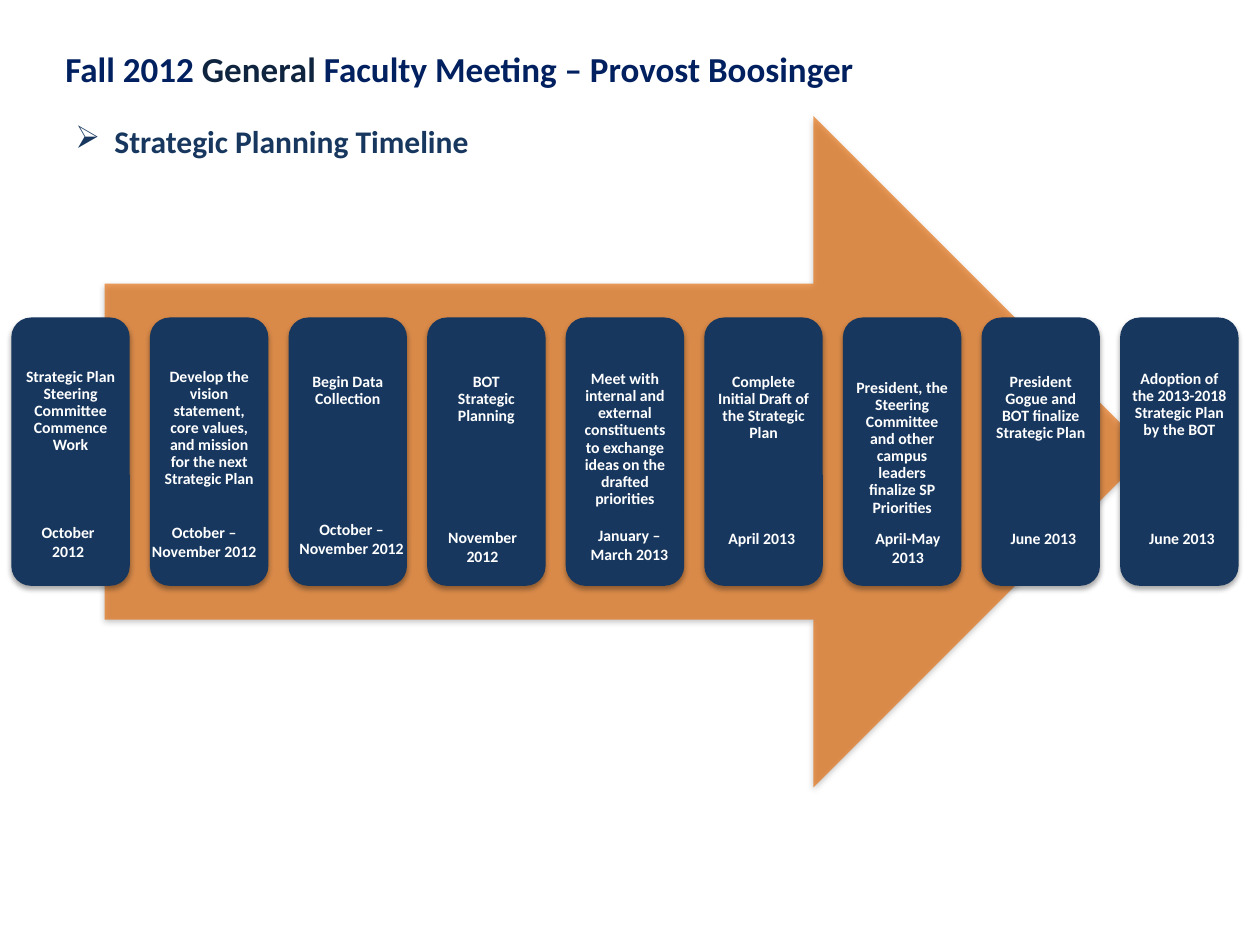
from lxml import etree
from pptx import Presentation
from pptx.dml.color import RGBColor
from pptx.enum.shapes import MSO_SHAPE
from pptx.enum.text import MSO_ANCHOR, PP_ALIGN
from pptx.oxml.ns import qn
from pptx.util import Inches, Pt

ARROW, CARD = MSO_SHAPE.RIGHT_ARROW, MSO_SHAPE.ROUNDED_RECTANGLE
TOP = MSO_ANCHOR.TOP
LEFT, CENTER = PP_ALIGN.LEFT, PP_ALIGN.CENTER

TITLE_BLUE = RGBColor(0x00, 0x20, 0x60)
DARK_NAVY = RGBColor(0x0F, 0x24, 0x3E)
NAVY = RGBColor(0x17, 0x37, 0x5E)
ORANGE = RGBColor(0xE4, 0x6C, 0x0A)
WHITE = RGBColor(0xFF, 0xFF, 0xFF)

FONT = "Calibri"
CARD_LEFT, CARD_TOP, CARD_WIDTH, CARD_HEIGHT = 0.09, 2.52, 0.94, 2.13
CARD_PITCH = 1.1

# Step, its top inset, date, and the date box (left, top, width)
STEPS = [
    ("Strategic Plan Steering Committee Commence Work", 0.36,
     "October\v2012", (0.08, 4.1, 0.92)),
    ("Develop the vision statement, core values, and mission for the next "
     "Strategic Plan", 0.36, "October –\vNovember 2012", (1.08, 4.1, 1.08)),
    ("Begin Data Collection", 0.4,
     "October –\vNovember 2012", (2.25, 4.08, 1.08)),
    ("BOT\vStrategic Planning", 0.4, "November 2012", (3.33, 4.14, 1)),
    ("Meet with internal and external constituents to exchange ideas on the "
     "drafted priorities", 0.38, "January –\vMarch 2013", (4.58, 4.12, 0.83)),
    ("Complete Initial Draft of the Strategic Plan", 0.4,
     "April 2013", (5.67, 4.15, 0.75)),
    ("President, the Steering Committee and other campus leaders finalize "
     "SP Priorities", 0.45, "April-May 2013", (6.83, 4.15, 0.75)),
    ("President Gogue and BOT finalize Strategic Plan", 0.4,
     "June 2013", (7.89, 4.15, 0.78)),
    ("Adoption of the 2013-2018 Strategic Plan by the BOT", 0.38,
     "June 2013", (8.99, 4.15, 0.78)),
]


def write(p, text, size=9, color=WHITE, align=CENTER, spacing=None):
    """Add bold text to a paragraph; a vertical tab is a line break."""
    p.alignment = align
    p.line_spacing = spacing
    for i, line in enumerate(text.split("\v")):
        if i:
            p.add_line_break()
        r = p.add_run()
        r.text = line
        r.font.name, r.font.size, r.font.bold = FONT, Pt(size), True
        r.font.color.rgb = color


def add_text_box(s, left, top, width, height):
    tf = s.shapes.add_textbox(Inches(left), Inches(top),
                              Inches(width), Inches(height)).text_frame
    tf.word_wrap = True
    return tf.paragraphs[0]


def add_shape(s, kind, left, top, width, height, color, alpha=None):
    sp = s.shapes.add_shape(kind, Inches(left), Inches(top),
                            Inches(width), Inches(height))
    sp.fill.solid()
    sp.fill.fore_color.rgb = color
    sp.line.fill.background()
    if alpha:
        clr = sp._element.spPr.find(qn("a:solidFill"))[0]
        etree.SubElement(clr, qn("a:alpha"), val=str(alpha * 1000))
    add_shadow(sp)
    return sp


def add_shadow(sp):
    """Soft black shadow straight below the shape."""
    sp.shadow.inherit = False
    effects = sp._element.spPr.find(qn("a:effectLst"))
    shadow = etree.SubElement(
        effects, qn("a:outerShdw"), blurRad=str(Pt(3.1)), dist=str(Pt(1.8)),
        dir="5400000", rotWithShape="0")
    clr = etree.SubElement(shadow, qn("a:srgbClr"), val="000000")
    etree.SubElement(clr, qn("a:alpha"), val="35000")


def add_bullet(p, char, color, indent):
    pPr = p._p.get_or_add_pPr()
    pPr.set("marL", str(Inches(indent)))
    pPr.set("indent", str(-Inches(indent)))
    bu_clr = etree.SubElement(pPr, qn("a:buClr"))
    etree.SubElement(bu_clr, qn("a:srgbClr"), val=str(color))
    etree.SubElement(pPr, qn("a:buChar"), char=char)


def add_card(s, index, text, inset):
    sp = add_shape(s, CARD, CARD_LEFT + index * CARD_PITCH, CARD_TOP,
                   CARD_WIDTH, CARD_HEIGHT, NAVY)
    tf = sp.text_frame
    tf.word_wrap = True
    tf.vertical_anchor = TOP
    tf.margin_left = tf.margin_right = tf.margin_bottom = Inches(0.04)
    tf.margin_top = Inches(inset)
    write(tf.paragraphs[0], text, spacing=0.9)


def main():
    prs = Presentation()
    prs.slide_width, prs.slide_height = Inches(10), Inches(7.5)
    s = prs.slides.add_slide(prs.slide_layouts[6])

    # Title
    p = add_text_box(s, 0.42, 0.33, 8.5, 0.44)
    for text, color in (("Fall 2012 ", TITLE_BLUE), ("General", DARK_NAVY),
                        (" Faculty Meeting – Provost Boosinger", TITLE_BLUE)):
        write(p, text, size=20, color=color, align=LEFT)

    # Arrow and step cards
    add_shape(s, ARROW, 0.83, 0.92, 8.29, 5.33, ORANGE, alpha=66)
    for i, (step, inset, _, _) in enumerate(STEPS):
        add_card(s, i, step, inset)

    # Subtitle
    p = add_text_box(s, 0.5, 0.92, 5.17, 0.4)
    add_bullet(p, "➢", NAVY, 0.31)
    write(p, "Strategic Planning Timeline", size=18, color=NAVY, align=LEFT)

    # Dates
    for _, _, date, (left, top, width) in STEPS:
        write(add_text_box(s, left, top, width, 0.4), date)

    prs.save("out.pptx")


if __name__ == "__main__":
    main()
